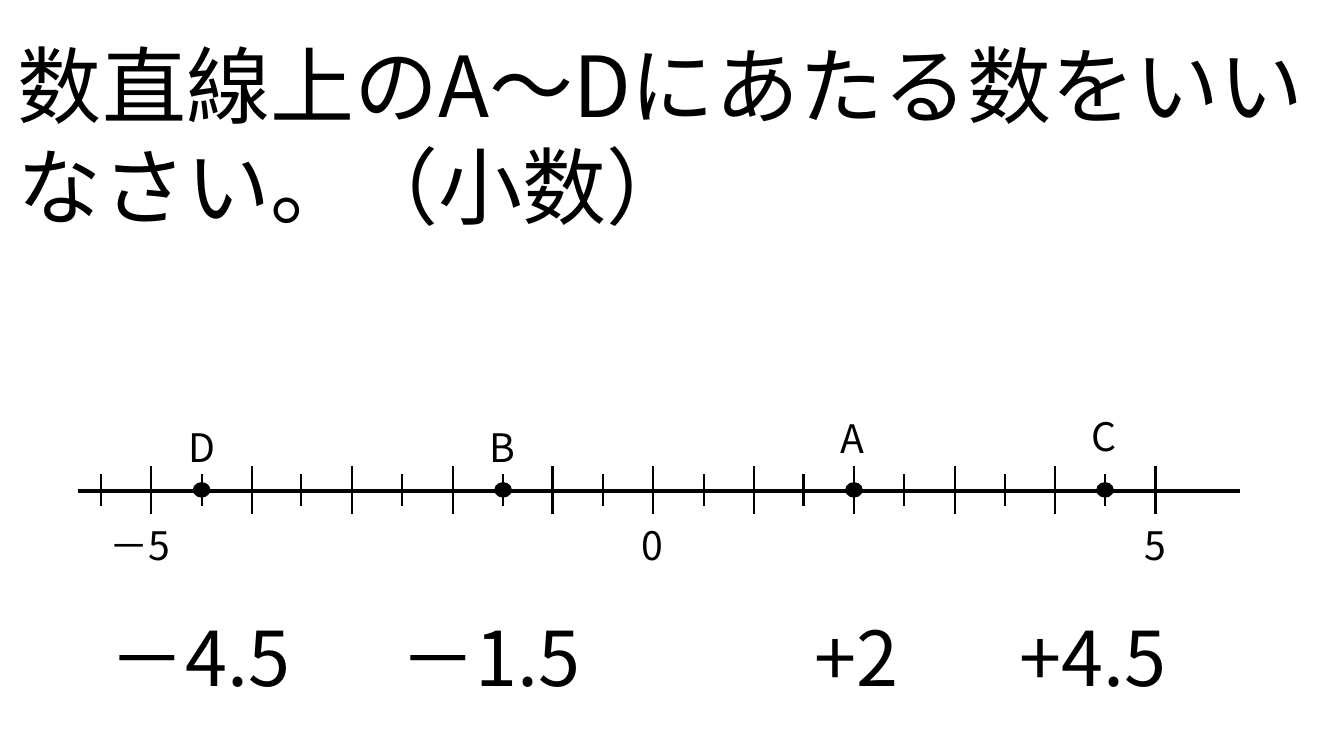
from lxml.etree import SubElement
from pptx import Presentation
from pptx.dml.color import RGBColor
from pptx.enum.shapes import MSO_CONNECTOR as Link, MSO_SHAPE as Form
from pptx.enum.text import MSO_ANCHOR as Anchor, PP_ALIGN as Align
from pptx.oxml.ns import qn
from pptx.util import Pt

BLACK = RGBColor(0, 0, 0)
WHITE = RGBColor(255, 255, 255)
SCALE = 9144
ZERO = 648
UNIT = 99.6
AXIS = 487


def place(value):
    return round(ZERO + UNIT * value)


class Board:
    font = "Noto Sans CJK JP"

    def __init__(self, deck):
        self.slide = deck.slides.add_slide(deck.slide_layouts[6])

    def shape(self, form, *box):
        item = self.slide.shapes.add_shape(form, *(n * SCALE for n in box))
        item.shadow.inherit = False
        item.fill.solid()
        return item

    def text(self, words, size, *box):
        item = self.shape(Form.RECTANGLE, *box)
        item.fill.fore_color.rgb = WHITE
        item.line.fill.background()
        frame = item.text_frame
        frame.text = words
        frame.word_wrap = True
        frame.vertical_anchor = Anchor.MIDDLE
        para = frame.paragraphs[0]
        para.alignment = Align.LEFT
        for run in para.runs:
            run.font.size = Pt(size)
            run.font.name = self.font
            run.font.color.rgb = BLACK
            SubElement(run.font._element, qn("a:ea"), typeface=self.font)

    def line(self, left, top, right, low, width):
        ends = (n * SCALE for n in (left, top, right, low))
        item = self.slide.shapes.add_connector(Link.STRAIGHT, *ends)
        item.line.color.rgb = BLACK
        item.line.width = Pt(width)
        SubElement(item._element.spPr, qn("a:effectLst"))

    def dot(self, x, y):
        item = self.shape(Form.OVAL, x - 8, y - 7, 16, 14)
        item.fill.fore_color.rgb = BLACK
        item.line.color.rgb = BLACK
        item.line.width = Pt(1)


def main():
    deck = Presentation()
    deck.slide_width = 1333 * SCALE
    deck.slide_height = 750 * SCALE
    board = Board(deck)

    board.text("数直線上のA～Dにあたる数をいいなさい。（小数）", 60, 8, 0, 1325, 266)

    board.line(77, AXIS, 1230, AXIS, 3)
    for step in range(-11, 11):
        x = place(step / 2)
        half = 16 if step % 2 else 24
        board.line(x, AXIS - half - 1, x, AXIS + half - 1, 1.5)

    for words, left, width in (("－5", 99, 98), ("0", 626, 60), ("5", 1125, 60)):
        board.text(words, 28, left, 517, width, 47)

    points = (
        ("A", 2, 411, "+2", 798, 184),
        ("C", 4.5, 409, "+4.5", 1001, 217),
        ("B", -1.5, 420, "－1.5", 387, 223),
        ("D", -4.5, 420, "－4.5", 99, 223),
    )
    for name, value, top, answer, left, width in points:
        x = place(value)
        board.dot(x, AXIS - 1)
        board.text(name, 28, x - 23, top, 60, 47)
        board.text(answer, 54, left, 607, width, 89)

    deck.save("out.pptx")


if __name__ == "__main__":
    main()
